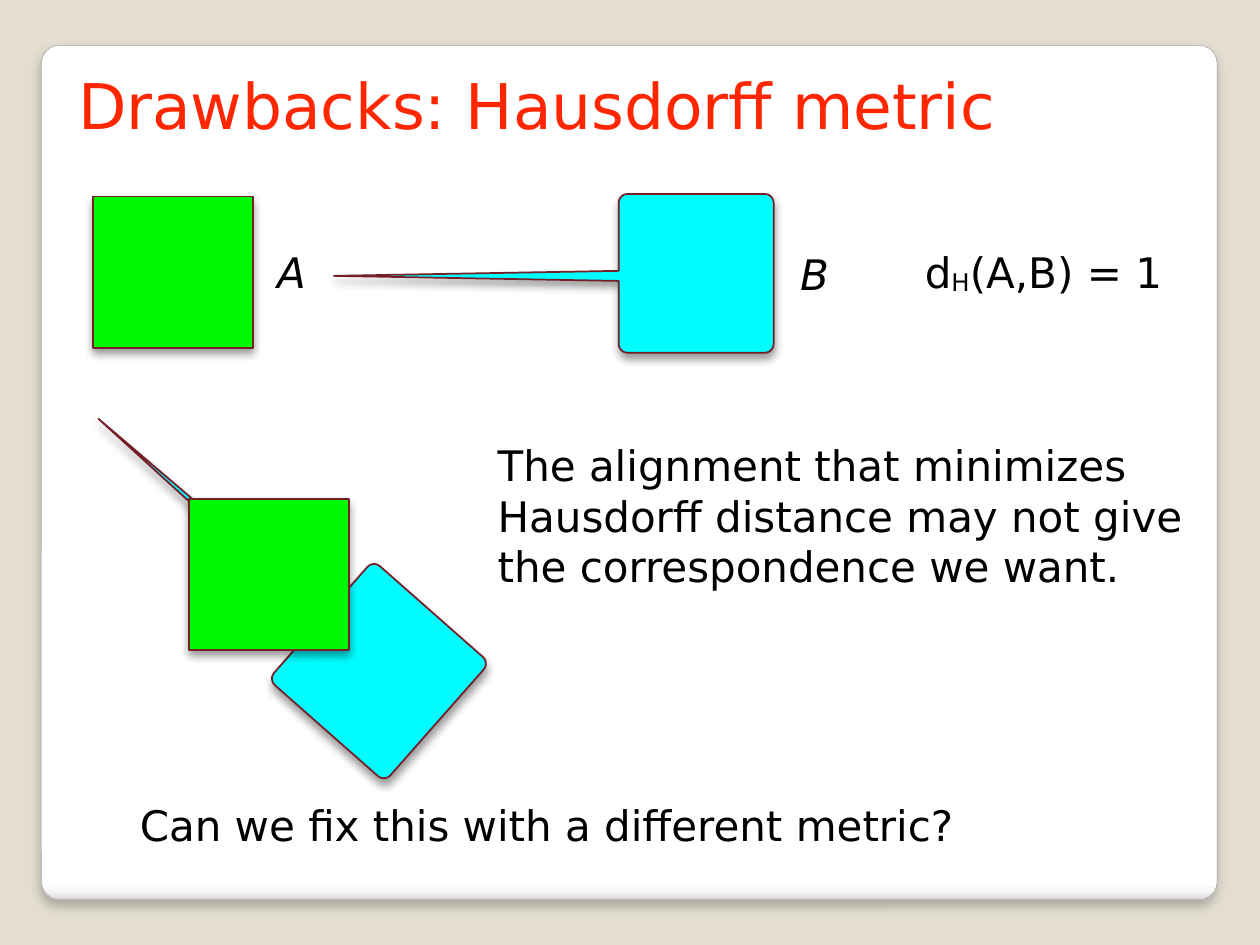
"""Build the slide on the drawbacks of the Hausdorff metric."""
from math import cos, radians, sin

from lxml import etree
from pptx import Presentation
from pptx.dml.color import RGBColor
from pptx.enum.shapes import MSO_SHAPE
from pptx.enum.text import MSO_AUTO_SIZE
from pptx.oxml.ns import qn
from pptx.util import Inches, Pt

RECTANGLE = MSO_SHAPE.RECTANGLE
ROUNDED = MSO_SHAPE.ROUNDED_RECTANGLE
GROW = MSO_AUTO_SIZE.SHAPE_TO_FIT_TEXT
FONT = "DejaVu Sans"
BACKDROP, PANEL_EDGE = "E3DED1", "A2A1A1"
GREEN, CYAN, MAROON, RED, BLACK = "00F900", "00FDFF", "741E27", "FF2600", "000000"

PANEL = (0.33, 0.36, 9.33, 6.78)
PANEL_STOPS = [(0, "FFFFFF"), (98, "FFFFFF"), (99, "F7F7F7"), (100, "D9D9D9")]
PANEL_SHADOW = {"alpha": 25, "blur": 6, "distance": 4}
SET_SHADOW = {"alpha": 40, "blur": 5, "distance": 3}

SET_A_SIZE = (1.27, 1.2)
SET_A_PLACES = [(0.74, 1.56), (1.5, 3.96)]
SET_B_BODY = (1.23, 1.26)
SET_B_CORNER, SPIKE_HALF = 0.07, 0.04
SET_B_PLACES = [
    {"left": 2.65, "top": 1.54, "spike": 2.26, "spike_y": 0.65, "angle": 0},
    {"left": 0.31, "top": 3.91, "spike": 2.38, "spike_y": 0.6, "angle": 41.4},
]

BODY = {"size": Pt(24), "name": FONT}
ITALIC = {**BODY, "italic": True}
HEADING = {"size": Pt(36), "name": FONT}
TEXTS = [
    ((6.3, 1.92, 0.49, 0.5), [["B"]], ITALIC, BLACK, True),
    ((2.15, 1.91, 0.34, 0.5), [["A"]], ITALIC, BLACK, False),
    ((7.29, 1.91, 2.09, 0.5), [["d", ("H", -6), "(A,B) = 1"]], BODY, BLACK, False),
    ((0.57, 0.48, 7.44, 0.71), [["Drawbacks: Hausdorff metric"]], HEADING, RED, False),
    ((3.9, 3.44, 5.66, 1.31),
     [["The alignment that minimizes"], ["Hausdorff distance may not give"],
      ["the correspondence we want."]], BODY, BLACK, False),
    ((1.06, 6.3, 6.63, 0.5), [["Can we fix this with a different metric?"]],
     BODY, BLACK, False),
]


def color(value):
    return RGBColor.from_string(value)


def add_shadow(shape, alpha, blur, distance):
    shape.shadow.inherit = False
    effects = shape._element.spPr.find(qn("a:effectLst"))
    outer = etree.SubElement(
        effects, qn("a:outerShdw"), blurRad=str(Pt(blur)), dist=str(Pt(distance)),
        dir="5400000", algn="b", rotWithShape="0")
    tint = etree.SubElement(outer, qn("a:srgbClr"), val=BLACK)
    etree.SubElement(tint, qn("a:alpha"), val=str(alpha * 1000))


def outline(shape, edge, width):
    shape.line.color.rgb = color(edge)
    shape.line.width = Pt(width)


def paint_set(shape, fill):
    shape.fill.solid()
    shape.fill.fore_color.rgb = color(fill)
    outline(shape, MAROON, 1)
    add_shadow(shape, **SET_SHADOW)


def add_panel(slide):
    panel = slide.shapes.add_shape(ROUNDED, *map(Inches, PANEL))
    panel.adjustments[0] = 0.021
    panel.fill.gradient()
    panel.fill.gradient_angle = 270
    stops = panel._element.spPr.find(qn("a:gradFill")).find(qn("a:gsLst"))
    for stop in list(stops):
        stops.remove(stop)
    for position, value in PANEL_STOPS:
        stop = etree.SubElement(stops, qn("a:gs"), pos=str(position * 1000))
        etree.SubElement(stop, qn("a:srgbClr"), val=value)
    outline(panel, PANEL_EDGE, 0.25)
    add_shadow(panel, **PANEL_SHADOW)


def add_set_a(slide, left, top):
    square = slide.shapes.add_shape(RECTANGLE, *map(Inches, (left, top, *SET_A_SIZE)))
    paint_set(square, GREEN)


def add_set_b(slide, left, top, spike, spike_y, angle):
    width, height = SET_B_BODY
    radius = SET_B_CORNER
    body_left, tip_y = left + spike, top + spike_y
    near_x, far_x = body_left + radius, body_left + width - radius
    near_y, far_y = top + radius, top + height - radius
    corners = [(near_x, near_y, 180), (far_x, near_y, 270),
               (far_x, far_y, 0), (near_x, far_y, 90)]
    points = [(body_left, tip_y + SPIKE_HALF), (left, tip_y),
              (body_left, tip_y - SPIKE_HALF)]
    for x, y, start in corners:
        for turn in range(start, start + 91, 15):
            points.append((x + radius * cos(radians(turn)),
                           y + radius * sin(radians(turn))))
    outline_points = [(Inches(x), Inches(y)) for x, y in points]
    builder = slide.shapes.build_freeform(*outline_points[0])
    builder.add_line_segments(outline_points[1:], close=True)
    spiked = builder.convert_to_shape()
    spiked.rotation = angle
    paint_set(spiked, CYAN)


def add_text(slide, place, lines, style, ink, wrap):
    frame = slide.shapes.add_textbox(*map(Inches, place)).text_frame
    settings = dict.fromkeys(
        ("margin_left", "margin_top", "margin_right", "margin_bottom"), Inches(0.05))
    settings.update(word_wrap=wrap, auto_size=GROW)
    for key, value in settings.items():
        setattr(frame, key, value)
    for index, line in enumerate(lines):
        paragraph = frame.add_paragraph() if index else frame.paragraphs[0]
        for piece in line:
            wording, baseline = piece if isinstance(piece, tuple) else (piece, 0)
            run = paragraph.add_run()
            run.text = wording
            for key, value in style.items():
                setattr(run.font, key, value)
            run.font.color.rgb = color(ink)
            if baseline:
                run._r.get_or_add_rPr().set("baseline", str(baseline * 1000))


def main():
    deck = Presentation()
    deck.slide_width, deck.slide_height = Inches(10), Inches(7.5)
    slide = deck.slides.add_slide(deck.slide_layouts[6])
    slide.background.fill.solid()
    slide.background.fill.fore_color.rgb = color(BACKDROP)
    add_panel(slide)
    for set_b, set_a in zip(SET_B_PLACES, SET_A_PLACES):
        add_set_b(slide, **set_b)
        add_set_a(slide, *set_a)
    for text in TEXTS:
        add_text(slide, *text)
    deck.save("out.pptx")


if __name__ == "__main__":
    main()
